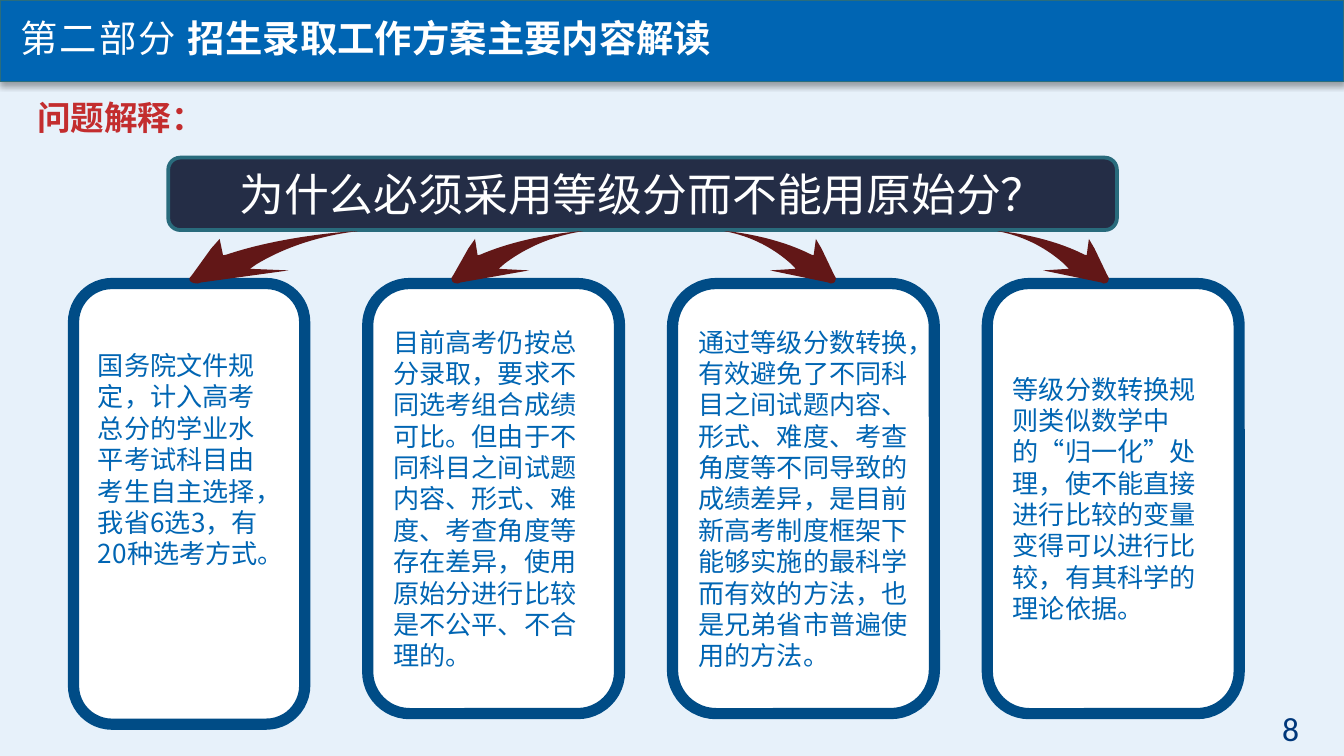
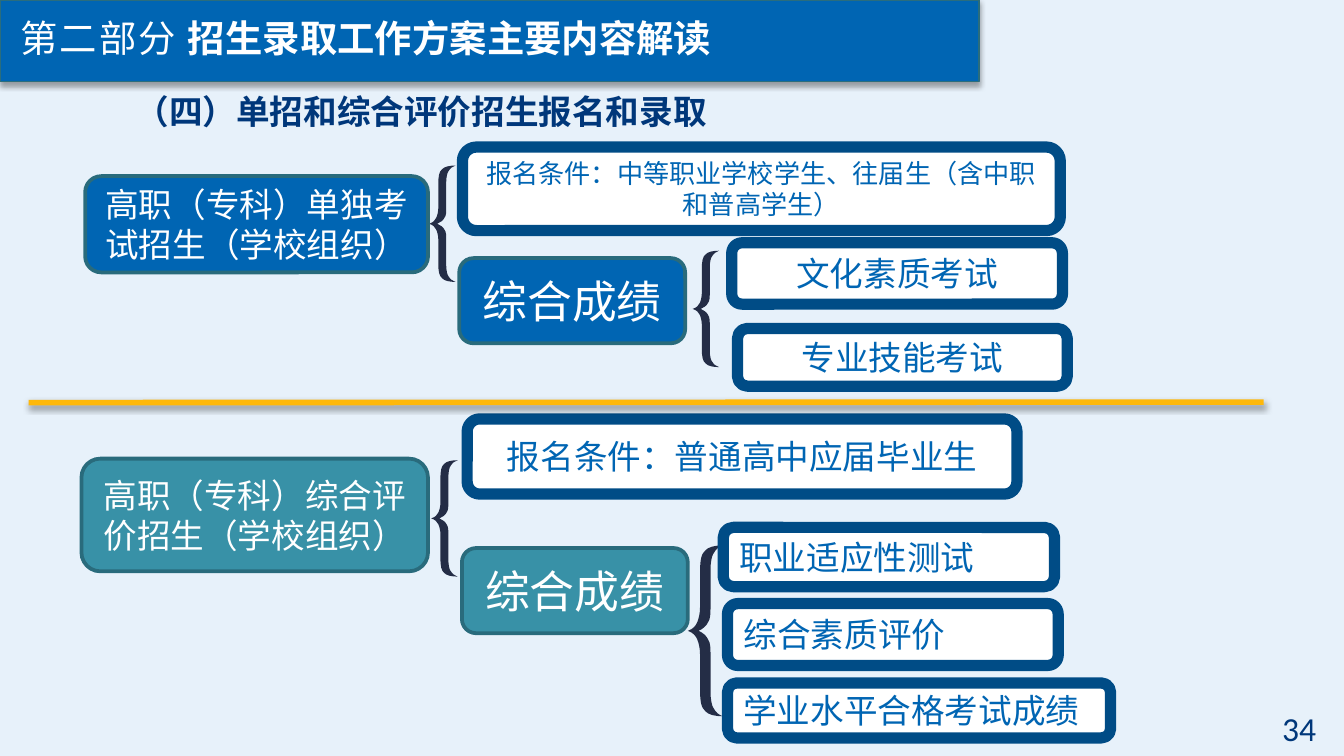
from lxml import etree
from pptx import Presentation
from pptx.dml.color import RGBColor
from pptx.enum.shapes import MSO_CONNECTOR as Connector, MSO_SHAPE as Shape
from pptx.enum.text import MSO_ANCHOR as Anchor, MSO_AUTO_SIZE as AutoSize, PP_ALIGN as Align
from pptx.oxml import parse_xml
from pptx.oxml.ns import nsdecls, qn
from pptx.util import Cm, Pt

PAPER, WHITE, NAVY, BLUE = "E7F1FA", "FFFFFF", "00377A", "0065B3"
FRAME, INK, TEAL, EDGE = "004C86", "242D46", "3891A7", "296B7C"
RED, MAROON, AMBER = "C32D2E", "621717", "FEB80A"
SANS, SANS_JP, LATIN = "Noto Sans CJK SC", "Noto Sans CJK JP", "Calibri"

# fill, line colour, line width, text colour
STYLES = {
    "card": (WHITE, FRAME, 6, BLUE),
    "blue": (BLUE, EDGE, 2, WHITE),
    "teal": (TEAL, EDGE, 2, WHITE),
    "dark": (INK, EDGE, 2, WHITE),
}

PART, TOPIC = "第二部分 ", "招生录取工作方案主要内容解读"
QUESTION = "为什么必须采用等级分而不能用原始分？"

# left, width, height, bottom inset, text
REASONS = [
    (1.39, 4.37, 8.33, 1.81, "国务院文件规定，计入高考总分的学业水平考试科目由考生自主选择，"
     "我省6选3，有20种选考方式。"),
    (6.95, 4.76, 8.13, 0.13, "目前高考仍按总分录取，要求不同选考组合成绩可比。但由于不同科目之间"
     "试题内容、形式、难度、考查角度等存在差异，使用原始分进行比较是不公平、不合理的。"),
    (12.71, 4.95, 8.13, 0.13, "通过等级分数转换，有效避免了不同科目之间试题内容、形式、难度、"
     "考查角度等不同导致的成绩差异，是目前新高考制度框架下能够实施的最科学而有效的方法，"
     "也是兄弟省市普遍使用的方法。"),
    (18.66, 4.76, 8.13, 0.13, "等级分数转换规则类似数学中的“归一化”处理，使不能直接进行比较的变量"
     "变得可以进行比较，有其科学的理论依据。"),
]
# left, width, points right
ARROWS = [(3.58, 3.18, False), (8.53, 2.49, False), (13.69, 2.11, True), (18.85, 2.11, True)]

# style, place, text, size, font, alignment
SCHEMES = [
    ("blue", (1.61, 3.33, 6.48, 1.82), "高职（专科）单独考试招生（学校组织）", 18, SANS, Align.CENTER),
    ("card", (8.74, 2.78, 11.3, 1.58), "报名条件：中等职业学校学生、往届生（含中职和普高学生）",
     14, SANS, Align.CENTER),
    ("blue", (8.68, 4.88, 4.27, 1.61), "综合成绩", 24, LATIN, Align.CENTER),
    ("card", (13.83, 4.59, 6.25, 1.16), "文化素质考试", 18, SANS, Align.CENTER),
    ("card", (13.94, 6.21, 6.23, 1.09), "专业技能考试", 18, SANS, Align.CENTER),
    ("teal", (1.54, 8.67, 6.55, 2.13), "高职（专科）综合评价招生（学校组织）", 18, SANS, Align.CENTER),
    ("card", (8.83, 7.92, 10.39, 1.42), "报名条件：普通高中应届毕业生", 18, SANS, Align.CENTER),
    ("teal", (8.73, 10.36, 4.27, 1.61), "综合成绩", 24, LATIN, Align.CENTER),
    ("card", (13.67, 9.97, 6.26, 1.12), "职业适应性测试", 18, SANS, Align.LEFT),
    ("card", (13.75, 11.41, 6.25, 1.17), "综合素质评价", 18, SANS, Align.LEFT),
    ("card", (13.75, 12.91, 7.24, 1.04), "学业水平合格考试成绩", 18, SANS, Align.LEFT),
]
BRACES = [(8.11, 3.13, 0.5, 2.2), (13.09, 4.74, 0.5, 2.2),
          (8.15, 8.7, 0.5, 2.2), (13, 10.31, 0.66, 3.23)]

# Outlines in a unit square: one point is a line, three are a Bézier curve.
ARROW = [
    [(0.05, 1)], [(0.03, 1), (0.02, 0.99), (0.01, 0.97)], [(0, 0.95), (0, 0.93), (0, 0.9)],
    [(0.02, 0.82)], [(0.13, 0.33)], [(0.18, 0.15)], [(0.2, 0.46)], [(0.22, 0.45)],
    [(0.54, 0.1), (0.94, 0), (1, 0)], [(0.74, 0.1), (0.54, 0.36), (0.4, 0.63)],
    [(0.36, 0.72)], [(0.59, 0.75)], [(0.07, 0.98)],
]
BRACE_OUTER = [
    [(1, 0)], [(0.77, 0), (0.58, 0.01), (0.5, 0.03)], [(0.38, 0.05), (0.35, 0.09), (0.35, 0.16)],
    [(0.35, 0.36)], [(0.35, 0.4), (0.31, 0.43), (0.27, 0.45)], [(0.23, 0.47), (0.15, 0.49), (0, 0.5)],
]
BRACE_INNER = [
    [(0.31, 0.5)], [(0.42, 0.49), (0.54, 0.47), (0.58, 0.45)], [(0.65, 0.43), (0.65, 0.4), (0.65, 0.35)],
    [(0.65, 0.14)], [(0.65, 0.1), (0.69, 0.06), (0.73, 0.05)], [(0.81, 0.02), (0.88, 0.01), (1, 0)],
]


def rgb(color):
    return RGBColor.from_string(color)


def cm(place):
    return [Cm(length) for length in place]


def put(shape, place):
    shape.left, shape.top, shape.width, shape.height = cm(place)


def format_span(span, size, color, font=SANS, bold=False):
    span.font.size, span.font.name, span.font.bold = Pt(size), font, bold
    span.font.color.rgb = rgb(color)
    latin = span.font._element.find(qn("a:latin"))
    latin.addnext(etree.Element(qn("a:ea"), typeface=font))


def paint(shape, fill, line=None, width=0):
    shape.fill.solid()
    shape.fill.fore_color.rgb = rgb(fill)
    if line:
        shape.line.color.rgb = rgb(line)
        shape.line.width = Pt(width)
    else:
        shape.line.fill.background()


def add_soft_shadow(shape):
    shape._element.spPr.append(parse_xml(
        f'<a:effectLst {nsdecls("a")}><a:outerShdw blurRad="{Pt(3.1)}" dist="{Pt(1.8)}" dir="5400000" '
        'rotWithShape="0"><a:srgbClr val="000000"><a:alpha val="35000"/></a:srgbClr>'
        '</a:outerShdw></a:effectLst>'))


def add_page(deck, number, band_width, heading, heading_color, heading_place, indent=0):
    page = deck.slides.add_slide(deck.slide_layouts[1])
    band, body = page.shapes.title, page.placeholders[1]

    put(band, (0, 0, band_width, 1.54))
    paint(band, BLUE, "2A6D7D", 0.75)
    add_soft_shadow(band)
    para = band.text_frame.paragraphs[0]
    para.alignment, para.line_spacing = Align.LEFT, 0.9
    for text, bold in ((PART, False), (TOPIC, True)):
        span = para.add_run()
        span.text = text
        format_span(span, 20, WHITE, bold=bold)
    para.runs[0].font._element.set("spc", "100")

    put(body, heading_place)
    body.text_frame.text = heading
    para = body.text_frame.paragraphs[0]
    para.space_before = Pt(0)
    properties = para._p.get_or_add_pPr()
    properties.set("marL", str(Cm(indent)))
    properties.set("indent", "0")
    etree.SubElement(properties, qn("a:buNone"))
    format_span(para.runs[0], 18, heading_color, bold=True)

    for holder, left, anchor in ((band, 0.39, Anchor.MIDDLE), (body, 0.18, Anchor.TOP)):
        frame = holder.text_frame
        frame.auto_size, frame.vertical_anchor = AutoSize.NONE, anchor
        frame.margin_left, frame.margin_right = Cm(left), Cm(0.18)
        frame.margin_top = frame.margin_bottom = Cm(0.1)

    box = page.shapes.add_textbox(*cm((23.98, 13.26, 1.27, 1.02)))
    box.text_frame.text = number
    box.text_frame.word_wrap = False
    format_span(box.text_frame.paragraphs[0].runs[0], 18, NAVY, LATIN)
    return page


def add_box(page, style, place, text, size, font=SANS, align=Align.LEFT, bottom=0.13):
    fill, line, width, color = STYLES[style]
    box = page.shapes.add_shape(Shape.ROUNDED_RECTANGLE, *cm(place))
    box.shadow.inherit = False
    paint(box, fill, line, width)
    frame = box.text_frame
    frame.word_wrap, frame.vertical_anchor = True, Anchor.MIDDLE
    frame.margin_bottom = Cm(bottom)
    frame.text = text
    para = frame.paragraphs[0]
    para.alignment = align
    format_span(para.runs[0], size, color, font)


def mirror(outline, across=False, down=False):
    return [[(1 - x if across else x, 1 - y if down else y) for x, y in part] for part in outline]


def reverse(outline):
    """Run through the same lines and curves from the last point to the first."""
    pairs = list(zip(outline, outline[1:]))[::-1]
    return [[outline[-1][-1]]] + [[*part[-2::-1], before[-1]] for before, part in pairs]


def brace_outline():
    """Mirror the upper half of the brace to get the whole."""
    lower_outer = mirror(reverse(BRACE_OUTER), down=True)[1:]
    lower_inner = mirror(reverse(BRACE_INNER), down=True)[1:]
    return BRACE_OUTER + lower_outer + lower_inner + BRACE_INNER[1:]


def add_outline(page, outline, place, color):
    left, top, width, height = place
    ends = [cm((left + part[-1][0] * width, top + part[-1][1] * height)) for part in outline]
    builder = page.shapes.build_freeform(*ends[0])
    builder.add_line_segments(ends[1:], close=True)
    shape = builder.convert_to_shape()
    lines = list(shape._element.iter(qn("a:lnTo")))
    for line, part in zip(lines, outline[1:]):
        if len(part) == 3:
            line.tag = qn("a:cubicBezTo")
            for index, (x, y) in enumerate(part[:2]):
                line.insert(index, etree.Element(qn("a:pt"), x=str(Cm(x * width)), y=str(Cm(y * height))))
    shape.shadow.inherit = False
    paint(shape, color)


def build_question_page(deck):
    page = add_page(deck, "8", 25.4, "问题解释：", RED, (0.52, 1.74, 24.4, 12.2))
    add_box(page, "dark", (3.18, 2.98, 17.93, 1.37), QUESTION, 24, SANS_JP, Align.CENTER)
    for left, width, height, bottom, text in REASONS:
        add_box(page, "card", (left, 5.36, width, height), text, 14, bottom=bottom)
    for left, width, right in ARROWS:
        add_outline(page, mirror(ARROW, across=right), (left, 4.37, width, 0.99), MAROON)


def build_scheme_page(deck):
    page = add_page(deck, "34", 18.5, "（四）单招和综合评价招生报名和录取", NAVY,
                    (1.09, 1.61, 23.1, 11.35), indent=1.29)
    for place in BRACES:
        add_outline(page, brace_outline(), place, INK)
    for style, place, text, size, font, align in SCHEMES:
        add_box(page, style, place, text, size, font, align)
    divider = page.shapes.add_connector(Connector.STRAIGHT, *cm((0.54, 7.61, 23.88, 7.6)))
    divider.line.color.rgb = rgb(AMBER)
    divider.line.width = Pt(3)
    add_soft_shadow(divider)


def main():
    deck = Presentation()
    deck.slide_width, deck.slide_height = cm((25.4, 14.29))
    background = deck.slide_master.background.fill
    background.solid()
    background.fore_color.rgb = rgb(PAPER)
    build_question_page(deck)
    build_scheme_page(deck)
    deck.save("out.pptx")


if __name__ == "__main__":
    main()
